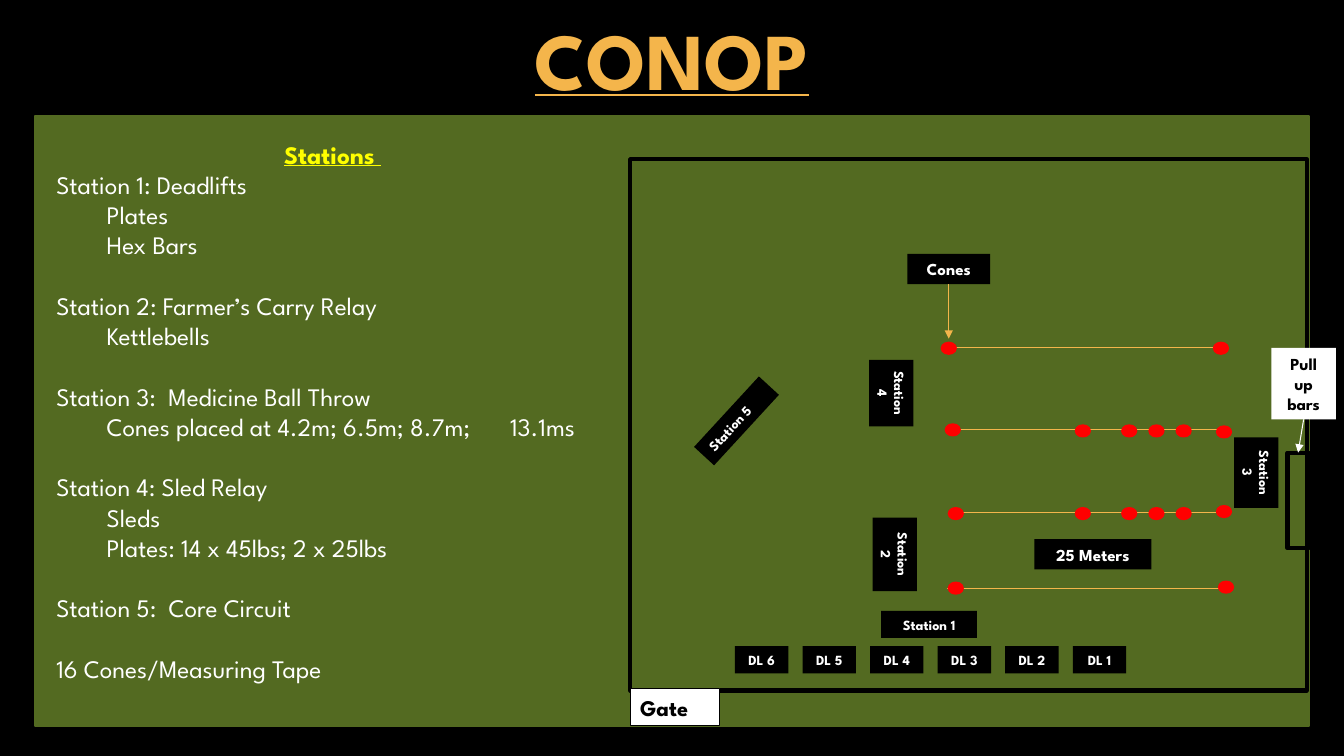
from dataclasses import dataclass

import pptx
import pptx.dml.color
import pptx.enum.shapes
import pptx.enum.text
import pptx.oxml.ns
import pptx.oxml.xmlchemy
import pptx.shapes.autoshape
import pptx.shapes.connector
import pptx.slide
import pptx.text.text
import pptx.util

Inches = pptx.util.Inches
Shape = pptx.shapes.autoshape.Shape
Line = pptx.shapes.connector.Connector
Slide = pptx.slide.Slide
Kind = pptx.enum.shapes.MSO_SHAPE
Align = pptx.enum.text.PP_ALIGN
Anchor = pptx.enum.text.MSO_ANCHOR


@dataclass(frozen=True)
class Theme:
    font: str = "League Spartan"
    black: str = "000000"
    white: str = "FFFFFF"
    gold: str = "F4B54B"
    green: str = "536A21"
    yellow: str = "FFFF00"
    red: str = "FF0000"
    title: float = 57.6
    body: float = 18
    gate: float = 16
    label: float = 12
    small: float = 10
    gap: float = 21.6
    thin: float = 0.75
    edge: float = 1.5
    thick: float = 3


THEME = Theme()


@dataclass(frozen=True)
class Box:
    left: float
    top: float
    width: float
    height: float
    fill: str | None = THEME.black
    line: str | None = None
    weight: float = THEME.thin
    text: str = ""
    size: float = THEME.small
    ink: str = THEME.white
    align: Align = Align.CENTER
    turn: float = 0


@dataclass(frozen=True)
class Lane:
    left: float
    right: float
    y: float
    cones: tuple[tuple[float, float], ...]  # top left corners


@dataclass(frozen=True)
class Station:
    name: str
    gear: tuple[str, ...] = ()


def color(code: str) -> pptx.dml.color.RGBColor:
    return pptx.dml.color.RGBColor.from_string(code)


def add_run(para: pptx.text.text._Paragraph, text: str, size: float,
            ink: str, bold: bool = False, under: bool = False) -> None:
    run = para.add_run()
    run.text = text
    font = run.font
    font.name, font.size = THEME.font, pptx.util.Pt(size)
    font.bold, font.underline = bold, under
    font.color.rgb = color(ink)


def draw_box(slide: Slide, box: Box, kind: Kind = Kind.RECTANGLE) -> Shape:
    shape = slide.shapes.add_shape(kind, Inches(box.left), Inches(box.top),
                                   Inches(box.width), Inches(box.height))
    shape.shadow.inherit = False
    shape.rotation = box.turn
    if box.fill:
        shape.fill.solid()
        shape.fill.fore_color.rgb = color(box.fill)
    else:
        shape.fill.background()
    if box.line:
        shape.line.color.rgb = color(box.line)
        shape.line.width = pptx.util.Pt(box.weight)
    else:
        shape.line.fill.background()
    if box.text:
        frame = shape.text_frame
        frame.word_wrap = True
        frame.vertical_anchor = Anchor.MIDDLE
        para = frame.paragraphs[0]
        para.alignment = box.align
        add_run(para, box.text, box.size, box.ink, bold=True)
    return shape


def draw_line(slide: Slide, start: tuple[float, float],
              end: tuple[float, float], ink: str, arrow: bool = False) -> Line:
    line = slide.shapes.add_connector(
        pptx.enum.shapes.MSO_CONNECTOR.STRAIGHT,
        *(Inches(value) for value in start + end))
    line.line.color.rgb = color(ink)
    line.line.width = pptx.util.Pt(THEME.thin)
    create = pptx.oxml.xmlchemy.OxmlElement
    props = line._element.spPr
    if arrow:
        tail = create("a:tailEnd")
        tail.set("type", "triangle")
        props.find(pptx.oxml.ns.qn("a:ln")).append(tail)
    props.append(create("a:effectLst"))
    return line


def draw_title(slide: Slide) -> None:
    frame = slide.shapes.add_textbox(0, 0, Inches(13.33), Inches(1.15)).text_frame
    frame.word_wrap = True
    frame.vertical_anchor = Anchor.MIDDLE
    para = frame.paragraphs[0]
    para.alignment = Align.CENTER
    add_run(para, "CONOP", THEME.title, THEME.gold, bold=True, under=True)


def draw_list(slide: Slide, stations: tuple[Station, ...]) -> None:
    frame = slide.shapes.add_textbox(Inches(0.46), Inches(1.33),
                                     Inches(5.68), Inches(5.86)).text_frame
    frame.word_wrap = True
    head = frame.paragraphs[0]
    head.alignment = Align.CENTER
    add_run(head, "Stations ", THEME.body, THEME.yellow, bold=True, under=True)
    for index, station in enumerate(stations):
        para = frame.add_paragraph()
        para.space_before = pptx.util.Pt(THEME.gap if index else 0)
        add_run(para, station.name, THEME.body, THEME.white)
        for item in station.gear:
            para = frame.add_paragraph()
            para._p.get_or_add_pPr().set("marL", str(Inches(0.5)))
            add_run(para, item, THEME.body, THEME.white)


STATIONS = (
    Station("Station 1: Deadlifts", ("Plates", "Hex Bars")),
    Station("Station 2: Farmer’s Carry Relay", ("Kettlebells",)),
    Station("Station 3:  Medicine Ball Throw",
            ("Cones placed at 4.2m; 6.5m; 8.7m; \t13.1ms",)),
    Station("Station 4: Sled Relay", ("Sleds", "Plates: 14 x 45lbs; 2 x 25lbs")),
    Station("Station 5:  Core Circuit"),
    Station("16 Cones/Measuring Tape"),
)
MARKS = (10.67, 11.13, 11.4, 11.67)
LANES = (
    Lane(9.37, 12.08, 3.45, ((9.34, 3.4), (12.04, 3.4))),
    Lane(9.43, 12.14, 4.26,
         ((9.38, 4.21), (12.07, 4.23), *((x, 4.22) for x in MARKS))),
    Lane(9.46, 12.17, 5.08,
         ((9.41, 5.04), (12.07, 5.02), *((x, 5.04) for x in MARKS))),
    Lane(9.39, 12.17, 5.84, ((9.41, 5.78), (12.09, 5.77))),
)
SIGNS = (
    Box(8.74, 6.06, 0.95, 0.27, text="Station 1"),
    Box(8.51, 5.28, 0.73, 0.44, text="Station 2", turn=90),
    Box(12.11, 4.47, 0.7, 0.44, text="Station 3", turn=90),
    Box(8.51, 3.68, 0.66, 0.44, text="Station 4", turn=90),
    Box(6.83, 4.04, 0.95, 0.27, text="Station 5", turn=312.6, align=Align.LEFT),
    Box(10.26, 5.35, 1.16, 0.3, text="25 Meters", size=THEME.label),
    Box(6.25, 6.83, 0.89, 0.37, THEME.white, THEME.black, text="Gate",
        size=THEME.gate, ink=THEME.black, align=Align.LEFT),
    *(Box(10.64 - 0.67 * i, 6.41, 0.53, 0.27, text=f"DL {i + 1}")
      for i in range(6)),
)


def main() -> None:
    deck = pptx.Presentation()
    deck.slide_width, deck.slide_height = Inches(13.33), Inches(7.5)
    slide = deck.slides.add_slide(deck.slide_layouts[6])
    slide.background.fill.solid()
    slide.background.fill.fore_color.rgb = color(THEME.black)
    draw_title(slide)
    # Panel, field and pull-up bars
    draw_box(slide, Box(0.35, 1.15, 12.63, 6.05, THEME.green, THEME.green, THEME.edge))
    draw_box(slide, Box(6.25, 1.58, 6.71, 5.27, None, THEME.black, THEME.thick))
    bars = draw_box(slide, Box(12.77, 4.49, 0.21, 0.95, None, THEME.black, THEME.thick))
    note = draw_box(slide, Box(12.61, 3.45, 0.64, 0.71, THEME.white,
                               text="Pull up bars", size=THEME.label, ink=THEME.black))
    arrow = draw_line(slide, (12.93, 4.16), (12.88, 4.49), THEME.white, arrow=True)
    arrow.begin_connect(note, 2)
    arrow.end_connect(bars, 0)
    # Station list and signs
    draw_list(slide, STATIONS)
    for sign in SIGNS:
        draw_box(slide, sign)
    # Lanes with their cones
    for lane in LANES:
        draw_line(slide, (lane.left, lane.y), (lane.right, lane.y), THEME.gold)
        for left, top in lane.cones:
            draw_box(slide, Box(left, top, 0.14, 0.11, THEME.red, THEME.red,
                                THEME.edge), Kind.OVAL)
    label = draw_box(slide, Box(9, 2.52, 0.82, 0.3, text="Cones", size=THEME.label))
    arrow = draw_line(slide, (9.41, 2.82), (9.41, 3.36), THEME.gold, arrow=True)
    arrow.begin_connect(label, 2)
    deck.save("out.pptx")


if __name__ == "__main__":
    main()
